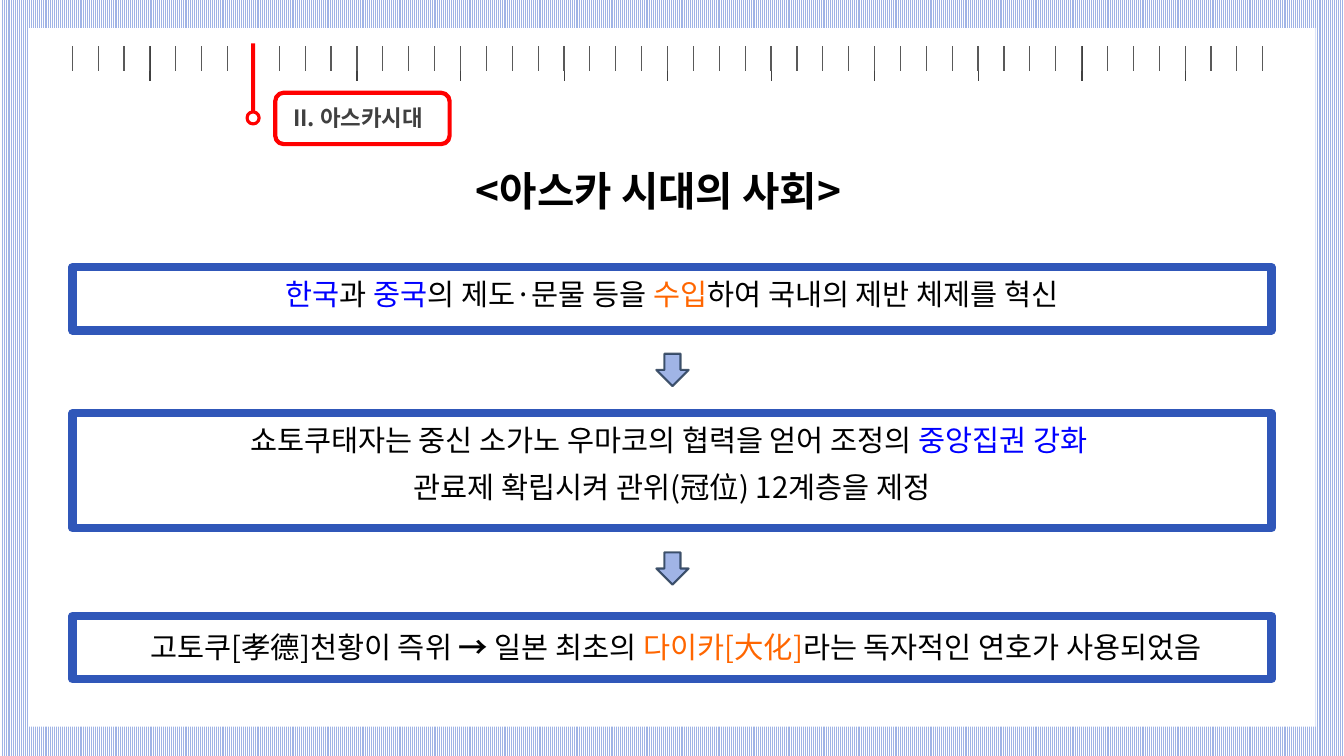
import pptx
import pptx.util
import pptx.dml.color
import pptx.enum.dml
import pptx.enum.shapes
import pptx.enum.text
import pptx.oxml
import pptx.oxml.ns
import pptx.oxml.xmlchemy

Inches = pptx.util.Inches
Shape = pptx.enum.shapes.MSO_SHAPE
Align = pptx.enum.text.PP_ALIGN

BLACK, WHITE, RED = "000000", "FFFFFF", "FF0000"
BLUE, ORANGE, FRAME, PALE = "0000FF", "FF6600", "3057B9", "A0B4E6"
NO_GRID_STYLE = "{2D5ABB26-0587-4C30-8999-92F81FD0307C}"


def color(value):
    return pptx.dml.color.RGBColor.from_string(value)


class SlideBuilder:
    """Holds the font and the current slide and adds styled elements to it."""

    font = "Noto Sans CJK KR"

    def __init__(self, slide):
        self.slide = slide

    def background(self, foreground, back):
        fill = self.slide.background.fill
        fill.patterned()
        fill.pattern = pptx.enum.dml.MSO_PATTERN.NARROW_VERTICAL
        fill.fore_color.rgb = color(foreground)
        fill.back_color.rgb = color(back)

    def shape(self, kind, box, fill=None, line=None, width=1, alpha=None, parent=None):
        shapes = (parent or self.slide).shapes
        shape = shapes.add_shape(kind, *map(Inches, box))
        shape.shadow.inherit = False
        if fill:
            shape.fill.solid()
            shape.fill.fore_color.rgb = color(fill)
        else:
            shape.fill.background()
        if line:
            shape.line.color.rgb = color(line)
            shape.line.width = pptx.util.Pt(width)
        else:
            shape.line.fill.background()
        if alpha:
            stroke = next(shape.line._ln.iter(pptx.oxml.ns.qn("a:srgbClr")))
            opacity = pptx.oxml.xmlchemy.OxmlElement("a:alpha")
            opacity.set("val", str(alpha * 1000))
            stroke.append(opacity)
        return shape

    def text(self, box, lines, size, spacing, align=Align.CENTER, bold=False):
        frame = self.slide.shapes.add_textbox(*map(Inches, box)).text_frame
        frame.word_wrap = True
        for index, runs in enumerate(lines):
            paragraph = frame.add_paragraph() if index else frame.paragraphs[0]
            paragraph.alignment = align
            paragraph.line_spacing = spacing
            for words, tint in runs:
                run = paragraph.add_run()
                run.text = words
                run.font.name = self.font
                run.font.size = pptx.util.Pt(size)
                run.font.bold = bold or words.startswith("→")
                run.font.color.rgb = color(tint)
                east_asian = pptx.oxml.xmlchemy.OxmlElement("a:ea")
                east_asian.set("typeface", self.font)
                run.font._element.find(pptx.oxml.ns.qn("a:latin")).addnext(east_asian)

    def ruler(self, box, columns, tint):
        frame = self.slide.shapes.add_table(1, columns, *map(Inches, box))
        table = frame.table
        table.first_row = table.horz_banding = False
        next(frame.element.iter(pptx.oxml.ns.qn("a:tableStyleId"))).text = NO_GRID_STYLE
        for index, column in enumerate(table.columns):
            column.width = Inches(box[2] / columns)
            cell = table.cell(0, index)
            cell.margin_top = cell.margin_bottom = 0
            cell.margin_left = cell.margin_right = 0
            cell.fill.background()
            ending = pptx.oxml.xmlchemy.OxmlElement("a:endParaRPr")
            ending.set("sz", "400")
            cell.text_frame.paragraphs[0]._p.append(ending)
            sides = ["a:lnL"] * (index > 0) + ["a:lnR"] * (index < columns - 1)
            for position, side in enumerate(sides):
                border = pptx.oxml.parse_xml(
                    f'<{side} {pptx.oxml.ns.nsdecls("a")} w="12700"><a:solidFill>'
                    f'<a:srgbClr val="{tint}"/></a:solidFill></{side}>'
                )
                cell._tc.tcPr.insert(position, border)


def main():
    presentation = pptx.Presentation()
    presentation.slide_width = Inches(13.33)
    presentation.slide_height = Inches(7.5)
    builder = SlideBuilder(presentation.slides.add_slide(presentation.slide_layouts[6]))

    builder.background(PALE, WHITE)
    builder.shape(Shape.RECTANGLE, (0.28, 0.28, 12.77, 6.93), WHITE)
    builder.ruler((0.46, 0.46, 12.33, 0.34), 12, "404040")
    builder.ruler((0.46, 0.46, 12.33, 0.24), 48, "595959")

    pin = builder.slide.shapes.add_group_shape()
    builder.shape(Shape.RECTANGLE, (2.49, 0.43, 0.04, 0.71), RED, parent=pin)
    builder.shape(Shape.OVAL, (2.45, 1.11, 0.12, 0.12), WHITE, RED, 2.25, parent=pin)
    builder.shape(Shape.ROUNDED_RECTANGLE, (2.73, 0.92, 1.73, 0.51), line=RED, width=3)
    builder.text((2.81, 0.92, 1.73, 0.51), [[("II. 아스카시대", "404040")]],
                 16, 1.24, Align.LEFT, True)
    builder.text((4.62, 1.68, 4.2, 0.58), [[("<아스카 시대의 사회>", BLACK)]],
                 29, 0.83, Align.LEFT, True)

    reform = [[("한국", BLUE), ("과 ", BLACK), ("중국", BLUE),
               ("의 제도·문물 등을 ", BLACK), ("수입", ORANGE),
               ("하여 국내의 제반 체제를 혁신", BLACK)]]
    government = [[("쇼토쿠태자는 중신 소가노 우마코의 협력을 얻어 조정의 ", BLACK),
                   ("중앙집권 강화 ", BLUE)],
                  [("관료제 확립시켜 관위(冠位) 12계층을 제정", BLACK)]]
    era_name = [[("고토쿠[孝德]천황이 즉위 ", BLACK), ("→ ", BLACK),
                 ("일본 최초의 ", BLACK), ("다이카[大化]", ORANGE),
                 ("라는 독자적인 연호가 사용되었음", BLACK)]]
    stages = [
        (2.65, 0.63, (0.72, 2.57, 11.89, 0.66), reform),
        (4.1, 1.14, (0.72, 4.02, 11.89, 1.22), government),
        (6.11, 0.63, (0.76, 6.08, 11.89, 0.66), era_name),
    ]
    for top, height, text_box, lines in stages:
        builder.shape(Shape.RECTANGLE, (0.72, top, 11.89, height), line=FRAME, width=6)
        builder.text(text_box, lines, 21, 1.33)
    for top in (3.51, 5.48):
        builder.shape(Shape.DOWN_ARROW, (6.51, top, 0.32, 0.32), PALE, "172D48", 1.5, 78)

    presentation.save("out.pptx")


if __name__ == "__main__":
    main()
